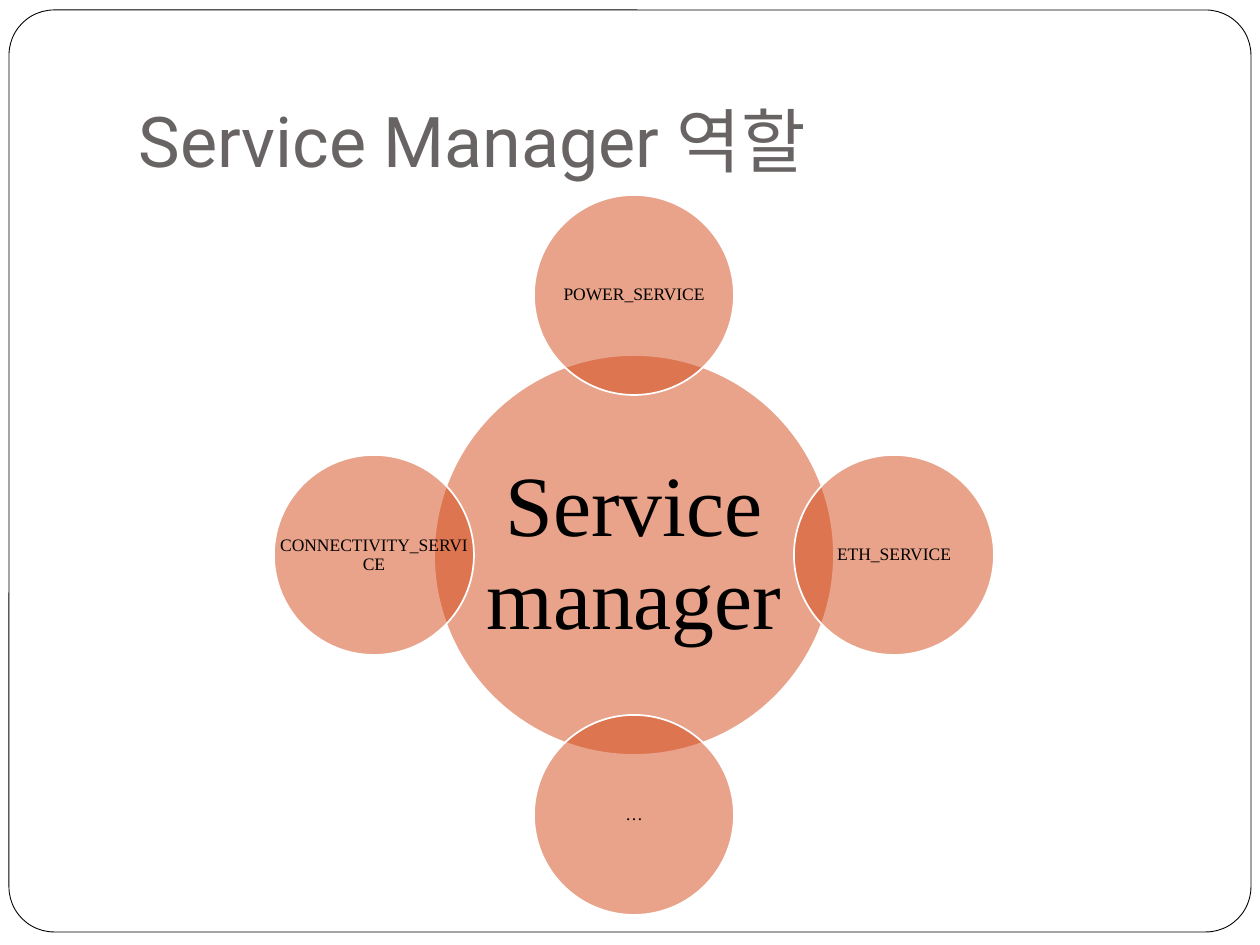
from dataclasses import dataclass

from lxml import etree
from pptx import Presentation
from pptx.dml.color import RGBColor
from pptx.enum.shapes import MSO_SHAPE
from pptx.enum.text import MSO_ANCHOR, MSO_AUTO_SIZE, PP_ALIGN
from pptx.oxml.ns import qn
from pptx.util import Emu, Pt

ELLIPSE, ROUNDED = MSO_SHAPE.OVAL, MSO_SHAPE.ROUNDED_RECTANGLE
MIDDLE, BOTTOM = MSO_ANCHOR.MIDDLE, MSO_ANCHOR.BOTTOM
LEFT, CENTER = PP_ALIGN.LEFT, PP_ALIGN.CENTER
NO_AUTOFIT = MSO_AUTO_SIZE.NONE
TITLE_ONLY = 5
EMU_PER_PX = 914400 // 126

HUB_X, HUB_Y = 634, 555
HUB_SIZE, SERVICE_SIZE, ORBIT = 400, 200, 260
SERVICES = [
    ("POWER_SERVICE", 0, -1),
    ("ETH_SERVICE", 1, 0),
    ("…", 0, 1),
    ("CONNECTIVITY_SERVICE", -1, 0),
]


@dataclass(frozen=True)
class Theme:
    accent: RGBColor = RGBColor(0xD3, 0x48, 0x17)
    title: RGBColor = RGBColor(0x69, 0x64, 0x64)
    ink: RGBColor = RGBColor(0, 0, 0)
    paper: RGBColor = RGBColor(0xFF, 0xFF, 0xFF)
    alpha_percent: int = 50
    title_font: str = "Roboto"
    body_font: str = "Times New Roman"
    title_size: int = 40
    hub_size: int = 49
    service_size: int = 10


THEME = Theme()


def px(length):
    return Emu(length * EMU_PER_PX)


def set_insets(frame, left, top, right, bottom):
    frame.margin_left, frame.margin_top = px(left), px(top)
    frame.margin_right, frame.margin_bottom = px(right), px(bottom)


def write(frame, text, font_name, size, color, align):
    paragraph = frame.paragraphs[0]
    paragraph.alignment = align
    run = paragraph.add_run()
    run.text = text
    run.font.name = font_name
    run.font.size = Pt(size)
    run.font.color.rgb = color
    return paragraph


def add_frame(slide):
    frame = slide.shapes.add_shape(ROUNDED, px(9), px(10), px(1242), px(922))
    frame.adjustments[0] = 0.049
    frame.shadow.inherit = False
    frame.fill.background()
    frame.line.color.rgb = THEME.ink
    frame.line.width = Pt(0.5)


def add_title(slide, text):
    title = slide.shapes.title
    title.left, title.top, title.width, title.height = px(126), px(38), px(1071), px(157)
    frame = title.text_frame
    frame.auto_size = NO_AUTOFIT
    frame.vertical_anchor = BOTTOM
    set_insets(frame, 13, 6, 13, 13)
    write(frame, text, THEME.title_font, THEME.title_size, THEME.title, LEFT)


def add_circle(diagram, label, center_x, center_y, diameter, font_size, inset):
    """Draw a translucent circle with a label box as wide as the circle."""
    box = [px(n) for n in (center_x - diameter // 2, center_y - diameter // 2,
                           diameter, diameter)]
    circle = diagram.shapes.add_shape(ELLIPSE, *box)
    circle.shadow.inherit = False
    circle.fill.solid()
    circle.fill.fore_color.rgb = THEME.accent
    color = circle.fill._xPr.find(qn("a:solidFill"))[0]
    etree.SubElement(color, qn("a:alpha"), val=str(THEME.alpha_percent * 1000))
    circle.line.color.rgb = THEME.paper
    circle.line.width = Pt(1)

    frame = diagram.shapes.add_textbox(*box).text_frame
    frame.word_wrap = True
    frame.vertical_anchor = MIDDLE
    set_insets(frame, *[inset] * 4)
    paragraph = write(frame, label, THEME.body_font, font_size, THEME.ink, CENTER)
    paragraph.line_spacing = 0.9


def add_service_diagram(slide):
    diagram = slide.shapes.add_group_shape()
    add_circle(diagram, "Service manager", HUB_X, HUB_Y, HUB_SIZE, THEME.hub_size, 9)
    for label, step_x, step_y in SERVICES:
        add_circle(diagram, label, HUB_X + step_x * ORBIT, HUB_Y + step_y * ORBIT,
                   SERVICE_SIZE, THEME.service_size, 1)


def main():
    deck = Presentation()
    deck.slide_width, deck.slide_height = px(1260), px(945)
    slide = deck.slides.add_slide(deck.slide_layouts[TITLE_ONLY])
    add_frame(slide)
    add_title(slide, "Service Manager 역할")
    add_service_diagram(slide)
    deck.save("out.pptx")


if __name__ == "__main__":
    main()
